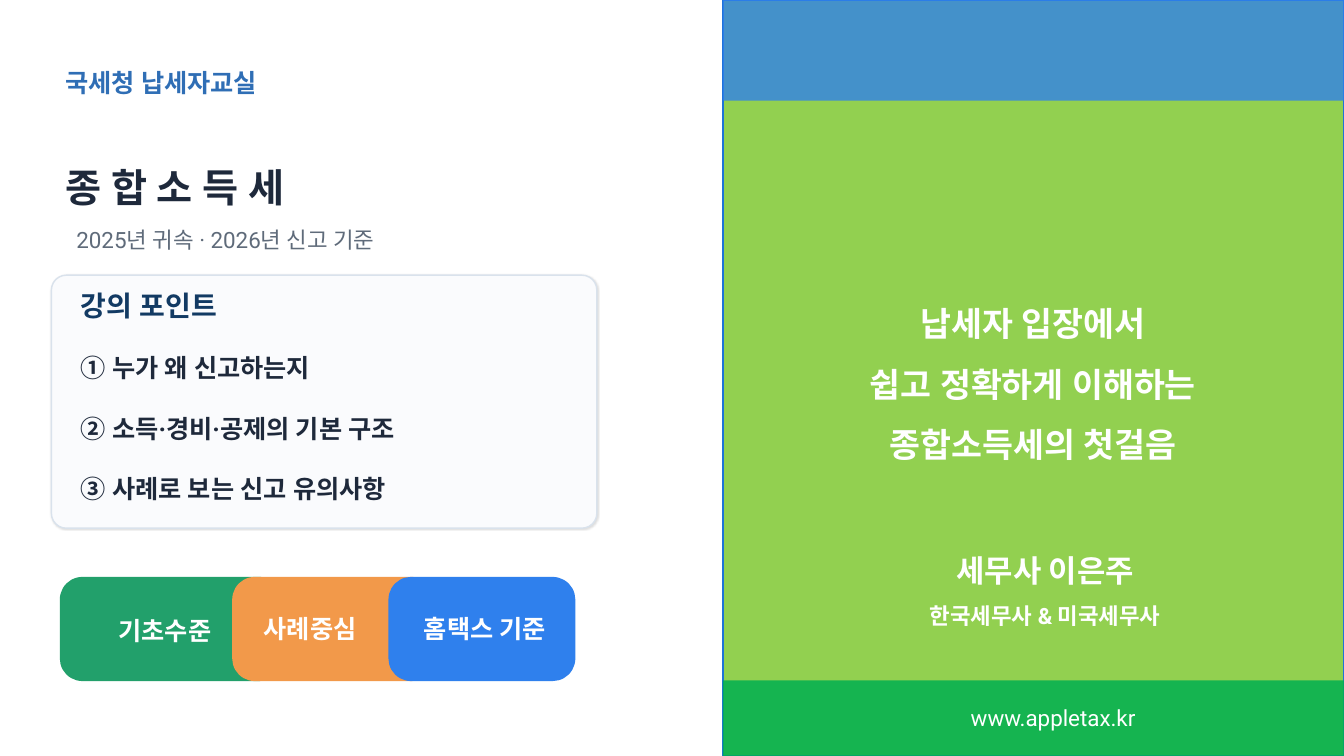
"""Builds the cover slide of an income tax lecture."""
from dataclasses import dataclass
from typing import Optional

from pptx import Presentation
from pptx import util as u
from pptx.dml.color import RGBColor
from pptx.enum import shapes, text
from pptx.oxml import parse_xml
from pptx.oxml.ns import nsdecls, qn

FONT = "Roboto"
COLORS = {
    "white": "FFFFFF", "lime": "92D050", "edge": "1E73D8", "blue": "2F80ED",
    "green": "00B050", "label": "2F6EB5", "ink": "1E293B", "gray": "5F6B7A",
    "card": "FAFBFD", "border": "D9E2EC", "navy": "123A63",
    "emerald": "22A06B", "orange": "F2994A",
}
LEFT, CENTER = text.PP_ALIGN.LEFT, text.PP_ALIGN.CENTER
PANEL_LEFT, PANEL_WIDTH = 7.17, 6.16
CHIP_TOP, CHIP_HEIGHT, CHIP_ROUND = 5.73, 1.02, 0.214


@dataclass
class Box:
    left: float
    top: float
    width: float
    height: float
    fill: str
    line: Optional[str] = None
    rounding: Optional[float] = None
    alpha: Optional[int] = None


@dataclass
class Line:
    words: str
    size: int
    color: str = "white"
    bold: bool = True
    before: float = 0


@dataclass
class Label:
    left: float
    top: float
    width: float
    height: float
    lines: list[Line]
    align: text.PP_ALIGN = LEFT
    spacing: float = 1.0
    inset: bool = True


PANELS = [
    Box(PANEL_LEFT, 0, PANEL_WIDTH, 7.5, "lime", "edge"),
    Box(PANEL_LEFT, 0, PANEL_WIDTH, 1, "blue", alpha=78),
    Box(PANEL_LEFT, 6.75, PANEL_WIDTH, 0.75, "green", alpha=85),
]
CARD = Box(0.51, 2.73, 5.41, 2.51, "card", "border", 0.059)
CHIPS = [
    Box(left, CHIP_TOP, width, CHIP_HEIGHT, color, color, CHIP_ROUND)
    for left, width, color in [
        (0.6, 2.19, "emerald"), (2.31, 1.99, "orange"), (3.86, 1.84, "blue")]
]
TITLE = Label(0.55, 1.62, 4.3, 0.46, [Line("종 합 소 득 세", 28, "ink")])
POINTS = ["① 누가 왜 신고하는지", "② 소득·경비·공제의 기본 구조", "③ 사례로 보는 신고 유의사항"]
BODY = Label(0.8, 3.41, 4.98, 1.04,
             [Line("강의 포인트", 20, "navy")]
             + [Line(point, 18, "ink", before=21.6) for point in POINTS],
             inset=False)
LABELS = [
    Label(0.55, 0.72, 2.81, 0.2, [Line("국세청 납세자교실", 18, "label")]),
    Label(0.66, 2.1, 4.8, 0.55,
          [Line("2025년 귀속 · 2026년 신고 기준", 16, "gray", False)]),
    Label(0.64, 5.98, 1.99, 0.55, [Line("기초수준", 18)], CENTER),
    Label(2.08, 5.96, 1.99, 0.55, [Line("사례중심", 18)], CENTER),
    Label(3.69, 5.96, 2.24, 0.55, [Line("홈택스 기준", 18)], CENTER),
    Label(7.78, 3.16, 4.93, 1.1,
          [Line(words, 24) for words in
           ("납세자 입장에서", "쉽고 정확하게 이해하는", "종합소득세의 첫걸음")],
          CENTER, 1.5),
    Label(8.44, 5.59, 3.85, 0.35,
          [Line("세무사 이은주", 22), Line("한국세무사 & 미국세무사", 16)], CENTER, 1.5),
    Label(9.53, 6.98, 2.03, 0.27, [Line("www.appletax.kr", 16, bold=False)]),
]


def rgb(name: str) -> RGBColor:
    """Return a named colour."""
    return RGBColor.from_string(COLORS[name])


def draw_box(slide, box: Box):
    """Draw a filled rectangle, rounded or square."""
    kind = shapes.MSO_SHAPE.RECTANGLE
    if box.rounding is not None:
        kind = shapes.MSO_SHAPE.ROUNDED_RECTANGLE
    sp = slide.shapes.add_shape(kind, u.Inches(box.left), u.Inches(box.top),
                                u.Inches(box.width), u.Inches(box.height))
    sp.shadow.inherit = False
    if box.rounding is not None:
        sp.adjustments[0] = box.rounding
    sp.fill.solid()
    sp.fill.fore_color.rgb = rgb(box.fill)
    if box.alpha is not None:
        color = sp.element.spPr.find(".//" + qn("a:srgbClr"))
        color.append(parse_xml(f'<a:alpha {nsdecls("a")} val="{box.alpha * 1000}"/>'))
    if box.line:
        sp.line.color.rgb = rgb(box.line)
        sp.line.width = u.Pt(1)
    else:
        sp.line.fill.background()
    return sp


def add_shadow(sp) -> None:
    """Give a shape a faint shadow to the lower right."""
    effects = sp.element.spPr.find(qn("a:effectLst"))
    effects.append(parse_xml(
        f'<a:outerShdw {nsdecls("a")} blurRad="{u.Pt(1)}" dist="{u.Pt(0.5)}" '
        'dir="2700000" algn="tl" rotWithShape="0"><a:srgbClr val="000000">'
        '<a:alpha val="12000"/></a:srgbClr></a:outerShdw>'))


def write_label(sp, label: Label) -> None:
    """Place a text shape and write its formatted lines."""
    sp.left, sp.top = u.Inches(label.left), u.Inches(label.top)
    sp.width, sp.height = u.Inches(label.width), u.Inches(label.height)
    tf = sp.text_frame
    tf.word_wrap = True
    tf.auto_size = text.MSO_AUTO_SIZE.NONE
    tf.vertical_anchor = text.MSO_ANCHOR.MIDDLE
    if not label.inset:
        tf.margin_left = tf.margin_right = tf.margin_top = tf.margin_bottom = 0
    tf.text = "\n".join(line.words for line in label.lines)
    for p, line in zip(tf.paragraphs, label.lines):
        p.alignment = label.align
        p.line_spacing = label.spacing
        p.space_before = u.Pt(line.before)
        if sp.is_placeholder:
            props = p._p.get_or_add_pPr()
            props.set("marL", "0")
            props.set("indent", "0")
            props.append(parse_xml(f'<a:buNone {nsdecls("a")}/>'))
        for r in p.runs:
            r.font.size = u.Pt(line.size)
            r.font.bold = line.bold
            r.font.color.rgb = rgb(line.color)
            r.font.name = FONT
            r.font._element.append(
                parse_xml(f'<a:ea {nsdecls("a")} typeface="{FONT}"/>'))


def main() -> None:
    """Build and save the cover slide."""
    prs = Presentation()
    prs.slide_width, prs.slide_height = u.Inches(13.33), u.Inches(7.5)
    slide = prs.slides.add_slide(prs.slide_layouts[1])
    for panel in PANELS:
        draw_box(slide, panel)
    add_shadow(draw_box(slide, CARD))
    for chip in CHIPS:
        draw_box(slide, chip)
    for sp, label in zip(list(slide.placeholders), (TITLE, BODY)):
        sp.element.getparent().append(sp.element)
        write_label(sp, label)
    for label in LABELS:
        write_label(slide.shapes.add_textbox(0, 0, 0, 0), label)
    prs.save("out.pptx")


if __name__ == "__main__":
    main()
